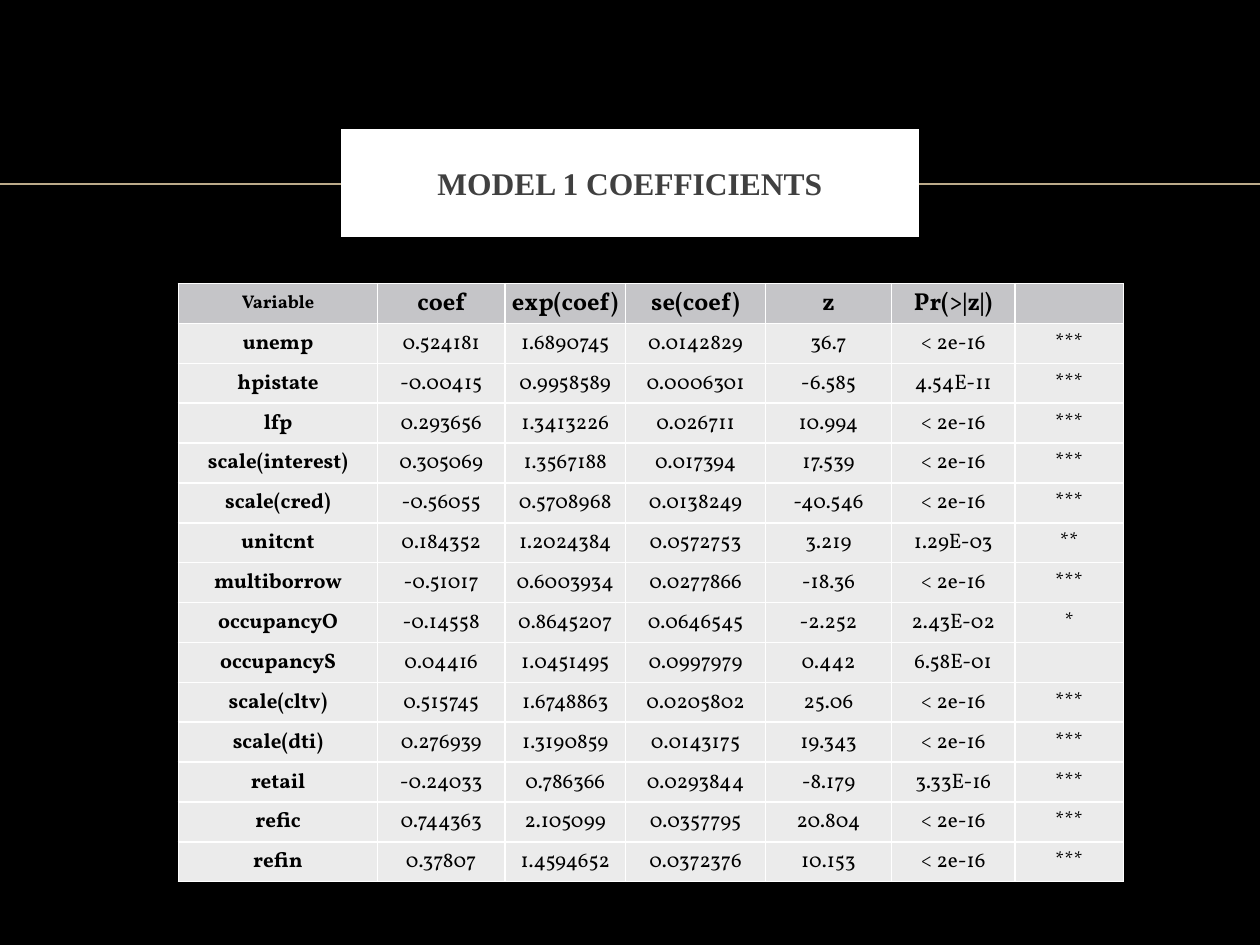
from typing import NamedTuple

from lxml.etree import SubElement
from pptx import Presentation
from pptx.dml.color import RGBColor
from pptx.enum.shapes import MSO_CONNECTOR
from pptx.enum.text import MSO_ANCHOR, MSO_AUTO_SIZE, PP_ALIGN
from pptx.oxml.ns import qn
from pptx.util import Pt

COLORS = {
    "back": "000000",
    "rule": "BBAA8A",
    "white": "FFFFFF",
    "title": "404040",
    "ink": "000000",
    "head": "C5C5C8",
    "body": "EBEBEB",
}
FONT = "Vollkorn"
WIDTHS = [113.8, 72.7, 69.1, 79.9, 72, 70.6, 61.9]
ROW_H = 22.8
HEADS = ["Variable", "coef", "exp(coef)", "se(coef)", "z", "Pr(>|z|)", ""]


class Term(NamedTuple):
    name: str
    coef: str
    ratio: str
    error: str
    z: str
    prob: str = "< 2e-16"
    stars: str = "***"


TERMS = [
    Term("unemp", "0.524181", "1.6890745", "0.0142829", "36.7"),
    Term("hpistate", "-0.00415", "0.9958589", "0.0006301", "-6.585", "4.54E-11"),
    Term("lfp", "0.293656", "1.3413226", "0.026711", "10.994"),
    Term("scale(interest)", "0.305069", "1.3567188", "0.017394", "17.539"),
    Term("scale(cred)", "-0.56055", "0.5708968", "0.0138249", "-40.546"),
    Term("unitcnt", "0.184352", "1.2024384", "0.0572753", "3.219", "1.29E-03", "**"),
    Term("multiborrow", "-0.51017", "0.6003934", "0.0277866", "-18.36"),
    Term("occupancyO", "-0.14558", "0.8645207", "0.0646545", "-2.252", "2.43E-02", "*"),
    Term("occupancyS", "0.04416", "1.0451495", "0.0997979", "0.442", "6.58E-01", ""),
    Term("scale(cltv)", "0.515745", "1.6748863", "0.0205802", "25.06"),
    Term("scale(dti)", "0.276939", "1.3190859", "0.0143175", "19.343"),
    Term("retail", "-0.24033", "0.786366", "0.0293844", "-8.179", "3.33E-16"),
    Term("refic", "0.744363", "2.105099", "0.0357795", "20.804"),
    Term("refin", "0.37807", "1.4594652", "0.0372376", "10.153"),
]


def color(key: str) -> RGBColor:
    return RGBColor.from_string(COLORS[key])


def add_run(para, text: str, size: float, bold: bool, ink: str, face: str) -> None:
    para.alignment = PP_ALIGN.CENTER
    run = para.add_run()
    run.text = text
    run.font.name = face
    run.font.size = Pt(size)
    run.font.bold = bold
    run.font.color.rgb = color(ink)


def add_edges(cell) -> None:
    props = cell._tc.get_or_add_tcPr()
    for side in ("lnL", "lnR", "lnT", "lnB"):
        edge = SubElement(props, qn(f"a:{side}"), w=str(Pt(1)))
        fill = SubElement(edge, qn("a:solidFill"))
        SubElement(fill, qn("a:srgbClr"), val=COLORS["white"])


def fill_cell(cell, text: str, size: float, bold: bool, fill: str) -> None:
    add_edges(cell)
    cell.fill.solid()
    cell.fill.fore_color.rgb = color(fill)
    cell.vertical_anchor = MSO_ANCHOR.MIDDLE
    cell.margin_left = cell.margin_right = cell.margin_top = Pt(0.72)
    cell.margin_bottom = Pt(0)
    if text:
        add_run(cell.text_frame.paragraphs[0], text, size, bold, "ink", FONT)


def add_title(slide, text: str):
    title = slide.shapes.title
    title.left, title.top = Pt(198), Pt(76.8)
    title.width, title.height = Pt(324), Pt(55.4)
    title.fill.solid()
    title.fill.fore_color.rgb = color("white")
    title.line.color.rgb = color("white")
    title.line.width = Pt(6)
    # Square corners
    SubElement(title.element.spPr.find(qn("a:ln")), qn("a:miter"), lim="800000")
    frame = title.text_frame
    frame.auto_size = MSO_AUTO_SIZE.NONE
    frame.word_wrap = True
    frame.vertical_anchor = MSO_ANCHOR.MIDDLE
    para = frame.paragraphs[0]
    para.space_before = Pt(4)
    add_run(para, text, 18, True, "title", "Times New Roman")
    return title


def add_rule(slide, title) -> None:
    y = Pt(105)
    rule = slide.shapes.add_connector(MSO_CONNECTOR.STRAIGHT, 0, y, Pt(720), y)
    rule.line.color.rgb = color("rule")
    rule.line.width = Pt(1)
    SubElement(rule.element.spPr, qn("a:effectLst"))
    title.element.addprevious(rule.element)  # behind the title


def add_grid(slide) -> None:
    rows = [HEADS, *TERMS]
    table = slide.shapes.add_table(
        len(rows), len(HEADS), Pt(102), Pt(162), Pt(540), Pt(ROW_H * len(rows))
    ).table
    table.horz_banding = False
    for col, width in zip(table.columns, WIDTHS):
        col.width = Pt(width)
    for r, row in enumerate(rows):
        table.rows[r].height = Pt(ROW_H)
        for c, text in enumerate(row):
            head = r == 0
            size = 12 if not head else 14 if c else 10.5
            fill_cell(table.cell(r, c), text, size, head or c == 0,
                      "head" if head else "body")


def main() -> None:
    deck = Presentation()
    deck.slide_width, deck.slide_height = Pt(720), Pt(540)
    slide = deck.slides.add_slide(deck.slide_layouts[5])
    # Background
    slide.background.fill.solid()
    slide.background.fill.fore_color.rgb = color("back")
    # Title box over its rule
    title = add_title(slide, "MODEL 1 COEFFICIENTS")
    add_rule(slide, title)
    # Coefficient table
    add_grid(slide)
    deck.save("out.pptx")


if __name__ == "__main__":
    main()
